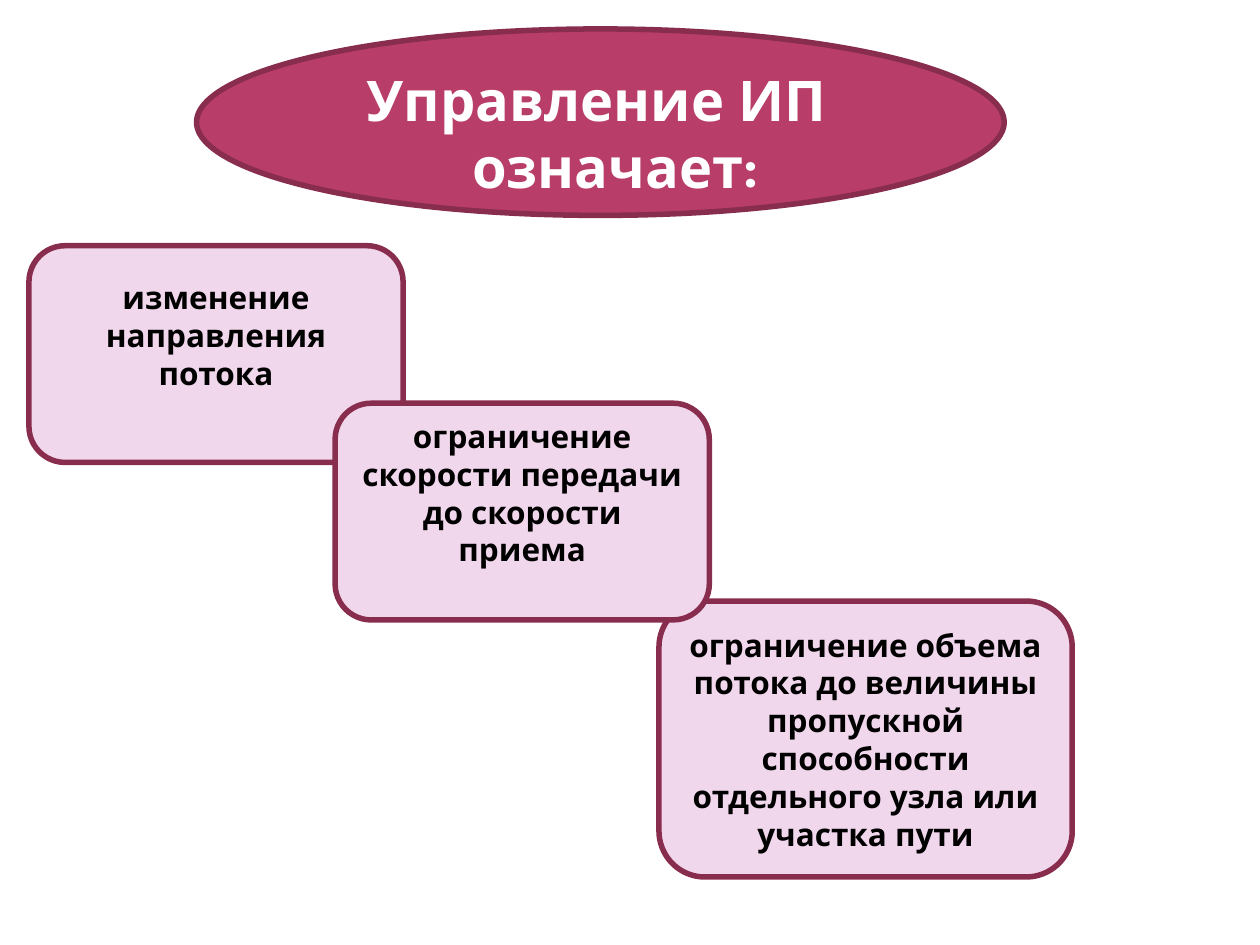
import pptx
import pptx.util
import pptx.dml.color
import pptx.enum.shapes
import pptx.enum.text

Pt = pptx.util.Pt
Kind = pptx.enum.shapes.MSO_SHAPE
Anchor = pptx.enum.text.MSO_ANCHOR

HUES = {"rose": "B83D68", "edge": "882D4D", "pale": "F1D7EC",
        "white": "FFFFFF", "black": "000000"}
FONT = "Karla"
LINE = 21.6
INSET = 3.6
CARDS = [
    ("ограничение объема потока до величины пропускной способности "
     "отдельного узла или участка пути", (376.56, 343.44, 236.16, 157.68), 0),
    ("изменение направления потока", (16.56, 140.4, 213.84, 123.84), LINE),
    ("ограничение скорости передачи до скорости приема",
     (191.52, 230.4, 213.84, 123.84), LINE),
]


def hue(name):
    return pptx.dml.color.RGBColor.from_string(HUES[name])


def add_form(slide, kind, box, fill):
    form = slide.shapes.add_shape(kind, *map(Pt, box))
    form.shadow.inherit = False
    form.fill.solid()
    form.fill.fore_color.rgb = hue(fill)
    form.line.color.rgb = hue("edge")
    form.line.width = Pt(3.15)
    return form


def set_text(shape, text, size, color, anchor):
    frame = shape.text_frame
    frame.text = text
    frame.word_wrap = True
    frame.auto_size = pptx.enum.text.MSO_AUTO_SIZE.NONE
    frame.vertical_anchor = anchor
    para = frame.paragraphs[0]
    para.alignment = pptx.enum.text.PP_ALIGN.CENTER
    for run in para.runs:
        run.font.name = FONT
        run.font.size = Pt(size)
        run.font.bold = True
        run.font.color.rgb = hue(color)
    return para


def add_title(slide):
    oval = add_form(slide, Kind.OVAL, (112.32, 16.56, 461.52, 106.56), "rose")
    title = slide.shapes.title
    title.element.addprevious(oval.element)
    title.left, title.top, title.width, title.height = map(
        Pt, (196.56, 33.84, 288.72, 84.96))
    para = set_text(title, "Управление ИП означает:", 32, "white", Anchor.TOP)
    props = para.runs[0].font and para._p.get_or_add_pPr()
    props.set("marL", str(Pt(21.6)))
    props.set("indent", str(Pt(-21.6)))


def add_card(slide, text, box, lift):
    card = add_form(slide, Kind.FLOWCHART_ALTERNATE_PROCESS, box, "pale")
    set_text(card, text, 18, "black", Anchor.MIDDLE)
    card.text_frame.margin_bottom = Pt(INSET + lift)


def main():
    deck = pptx.Presentation()
    deck.slide_width, deck.slide_height = Pt(720), Pt(540)
    slide = deck.slides.add_slide(deck.slide_layouts[5])
    add_title(slide)
    for text, box, lift in CARDS:
        add_card(slide, text, box, lift)
    deck.save("out.pptx")


if __name__ == "__main__":
    main()
